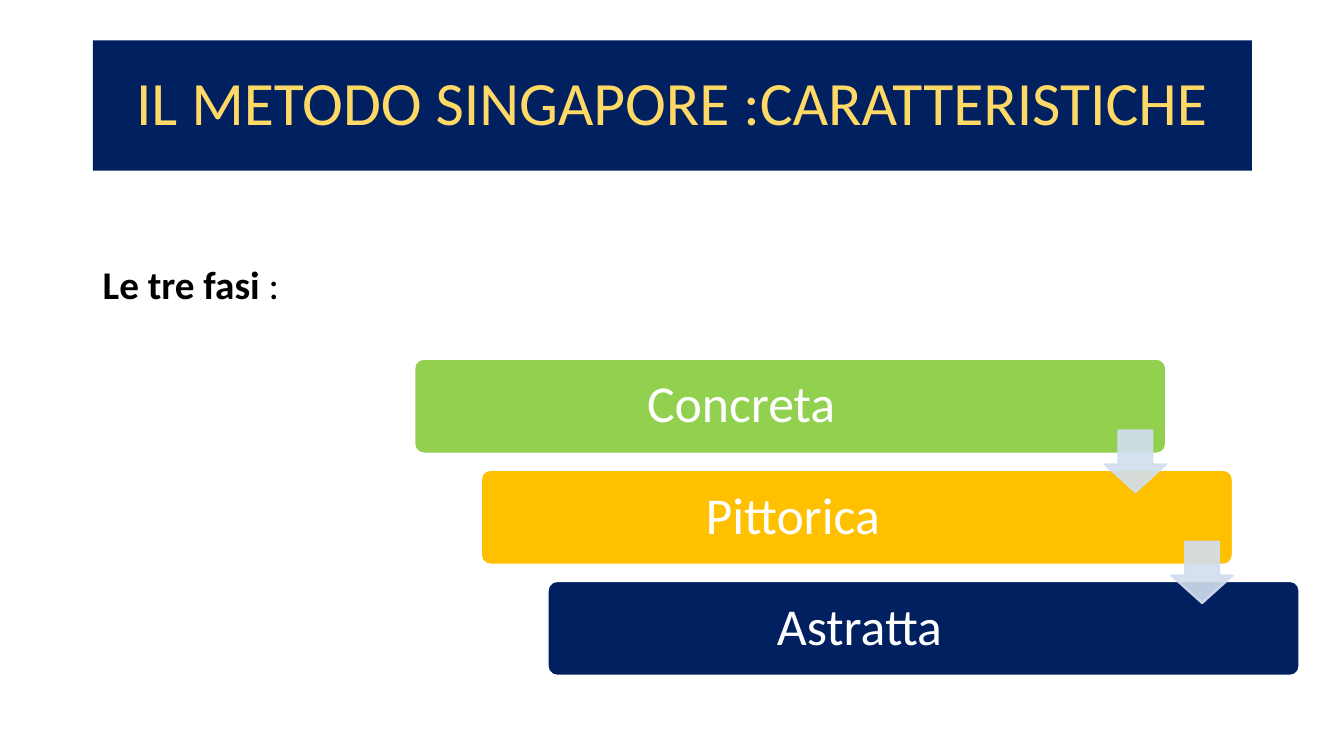
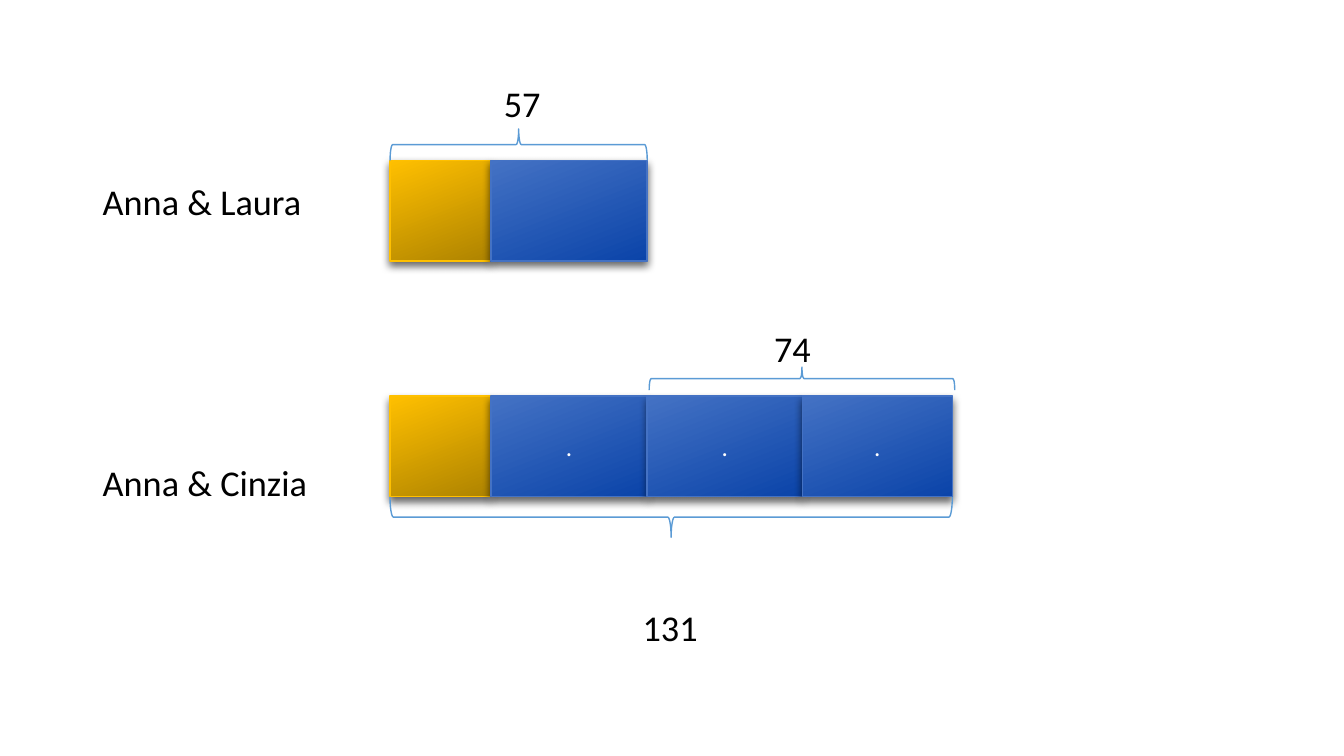
from lxml.etree import SubElement
from pptx import Presentation
from pptx.dml.color import RGBColor
from pptx.enum.shapes import MSO_SHAPE
from pptx.enum.text import MSO_ANCHOR, PP_ALIGN
from pptx.oxml.ns import qn
from pptx.util import Cm, Pt

# Shared colours and formats
NAVY, AMBER, GREEN, BLUE = "002060", "FFC000", "92D050", "4472C4"
WHITE, BLACK, TITLE_GOLD = "FFFFFF", "000000", "FFD966"
ARROW_BLUE, BRACE_BLUE = "D2DEEF", "5B9BD5"
DARK_END = {AMBER: "AE8300", BLUE: "0B44A9"}
FRAME = {"word_wrap": True, "vertical_anchor": MSO_ANCHOR.MIDDLE}
FONT = {"name": "Calibri", "bold": False}
MARGINS = ("margin_left", "margin_top", "margin_right", "margin_bottom")

TEXT_LEFT = 2.59
BAR_LEFT, BAR_HEIGHT = 9.83, 2.54


def set_values(target, values):
    for name, value in values.items():
        setattr(target, name, value)


def rgb(colour):
    return RGBColor.from_string(colour)


def add_form(slide, kind, box, fill=None, line=None, line_width=1, adjust=()):
    form = slide.shapes.add_shape(kind, *map(Cm, box))
    form.shadow.inherit = False
    if fill:
        form.fill.solid()
        form.fill.fore_color.rgb = rgb(fill)
    else:
        form.fill.background()
    if line:
        form.line.color.rgb = rgb(line)
        form.line.width = Pt(line_width)
    else:
        form.line.fill.background()
    for index, value in enumerate(adjust):
        form.adjustments[index] = value
    return form


def write(holder, runs, size, colour=BLACK, align=PP_ALIGN.CENTER, margins=(), spacing=1):
    """Write (text, font changes) runs as one paragraph."""
    frame = holder.text_frame
    set_values(frame, {**FRAME, **dict(zip(MARGINS, map(Cm, margins)))})
    paragraph = frame.paragraphs[0]
    set_values(paragraph, {"alignment": align, "line_spacing": spacing})
    for text, changes in runs:
        run = paragraph.add_run()
        run.text = text
        set_values(run.font, {**FONT, "size": Pt(size), **changes})
        run.font.color.rgb = rgb(colour)


def add_label(slide, runs, left, middle, width, size=25.9, align=PP_ALIGN.LEFT):
    height = 1.2
    label = slide.shapes.add_textbox(*map(Cm, (left, middle - height / 2, width, height)))
    write(label, runs, size, align=align, margins=(0, 0, 0, 0))


def add_number(slide, number, centre, middle):
    width = 3
    add_label(slide, [(number, {})], centre - width / 2, middle, width, align=PP_ALIGN.CENTER)


def add_title(slide, title):
    band = add_form(slide, MSO_SHAPE.RECTANGLE, (2.34, 1.02, 29.21, 3.28), NAVY)
    write(band, [(title, {})], 44, TITLE_GOLD, spacing=0.9)


def add_phase(slide, name, colour, box, text_width):
    phase = add_form(slide, MSO_SHAPE.ROUNDED_RECTANGLE, box, colour, WHITE, 1.5, (0.1,))
    inset = 0.38
    margins = (inset, inset, box[2] - text_width + inset, inset)
    write(phase, [(name, {})], 37, WHITE, margins=margins, spacing=0.9)


def add_phase_arrow(slide, right, top, size=1.55):
    arrow = add_form(slide, MSO_SHAPE.DOWN_ARROW, (right - size, top, size, size),
                     ARROW_BLUE, ARROW_BLUE, 1.5, (0.55, 0.45))
    for colour in arrow.element.spPr.iter(qn("a:srgbClr")):
        SubElement(colour, qn("a:alpha"), val="90000")


def add_unit(slide, box, colour, mark):
    """Draw one shaded part of a bar."""
    unit = add_form(slide, MSO_SHAPE.RECTANGLE, box, colour, colour)
    unit.fill.gradient()
    unit.fill.gradient_angle = 291
    for stop, (position, shade) in zip(unit.fill.gradient_stops,
                                       ((0, colour), (1, DARK_END[colour]))):
        stop.position = position
        stop.color.rgb = rgb(shade)
    effects = unit.element.spPr.find(qn("a:effectLst"))
    shadow = SubElement(effects, qn("a:outerShdw"), blurRad=str(Pt(6)), dist=str(Pt(3)),
                        dir="5400000", algn="ctr", rotWithShape="0")
    shade = SubElement(shadow, qn("a:srgbClr"), val=BLACK)
    SubElement(shade, qn("a:alpha"), val="60000")
    if mark:
        write(unit, [(mark, {})], 18, WHITE)


def add_bar(slide, top, units):
    left = BAR_LEFT
    for width, colour, mark in units:
        add_unit(slide, (left, top, width, BAR_HEIGHT), colour, mark)
        left += width
    return left - BAR_LEFT


def add_brace(slide, left, top, span, depth, rotation):
    """Lay a brace flat: 90 points up, 270 points down."""
    box = (left + (span - depth) / 2, top + (depth - span) / 2, depth, span)
    brace = add_form(slide, MSO_SHAPE.LEFT_BRACE, box, line=BRACE_BLUE)
    brace.rotation = rotation


def build_phases(slide):
    add_title(slide, "IL METODO SINGAPORE :CARATTERISTICHE")
    add_label(slide, [("Le tre fasi ", {"bold": True}), (":", {})], TEXT_LEFT, 7.16, 10, 28)

    # Staircase of phases, then the arrows over it
    phases = (("Concreta", GREEN, 16.48), ("Pittorica", AMBER, 15.72), ("Astratta", NAVY, 15.72))
    width, height = 18.95, 2.39
    corners = [(10.44 + 1.68 * step, 9.04 + 2.8 * step) for step in range(len(phases))]
    for (name, colour, text_width), corner in zip(phases, corners):
        add_phase(slide, name, colour, (*corner, width, height), text_width)
    for left, top in corners[:-1]:
        add_phase_arrow(slide, left + width, top + 1.81)


def build_bar_model(slide):
    # Row labels
    for names, middle in (("Anna & Laura", 5.07), ("Anna & Cinzia", 12.15)):
        add_label(slide, [(names, {})], TEXT_LEFT, middle, 7)

    # Bars
    laura_top, cinzia_top = 4.04, 9.98
    anna = (2.54, AMBER, "")
    laura_span = add_bar(slide, laura_top, (anna, (3.94, BLUE, "")))
    cinzia_units = [(width, BLUE, ".") for width in (3.94, 3.91, 3.78)]
    cinzia_span = add_bar(slide, cinzia_top, (anna, *cinzia_units))

    # Braces and their numbers
    add_brace(slide, BAR_LEFT, laura_top - 0.79, laura_span, 0.79, 90)
    add_brace(slide, BAR_LEFT, cinzia_top + BAR_HEIGHT, cinzia_span, 1.02, 270)
    add_brace(slide, 16.36, 9.25, 7.7, 0.58, 90)
    for number, centre, middle in (("57", 13.16, 2.6), ("74", 19.97, 8.77), ("131", 16.89, 15.8)):
        add_number(slide, number, centre, middle)


def main():
    deck = Presentation()
    set_values(deck, {"slide_width": Cm(33.87), "slide_height": Cm(19.05)})
    for build in (build_phases, build_bar_model):
        build(deck.slides.add_slide(deck.slide_layouts[6]))
    deck.save("out.pptx")


if __name__ == "__main__":
    main()
